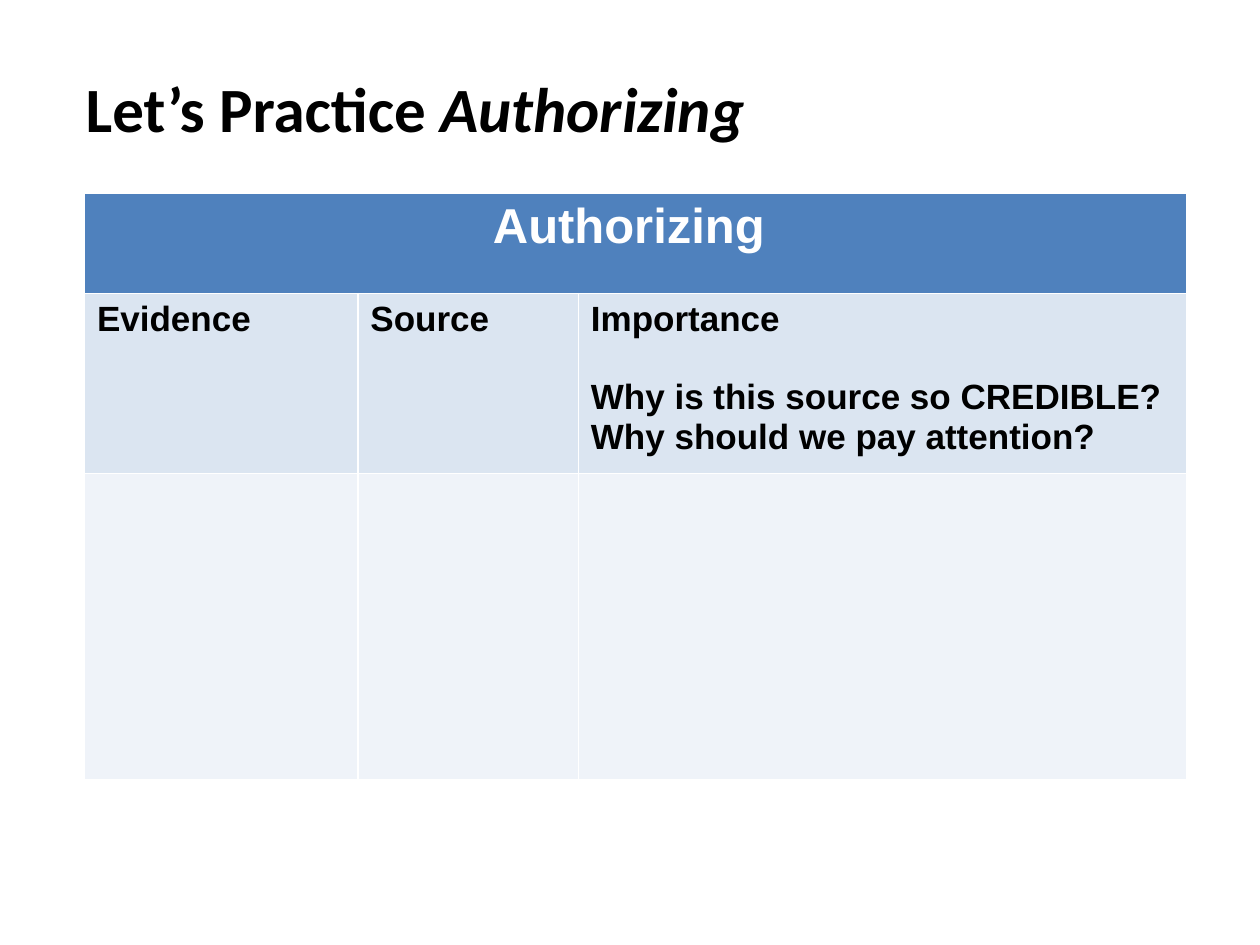
from pptx import Presentation
from pptx.dml.color import RGBColor
from pptx.enum.text import MSO_ANCHOR as Anchor, MSO_AUTO_SIZE as AutoSize, PP_ALIGN as Align
from pptx.util import Inches, Pt

HEADER, LABELS, BLANK = "4F81BD", "DBE5F1", "EFF3F9"
COLUMNS = (2.17, 1.75, 4.83)
ROWS = (0.8, 1.43, 2.43)
PROMPT = "Why is this source so CREDIBLE? Why should we pay attention?"
HEADINGS = (["Evidence"], ["Source"], ["Importance", PROMPT])


def color(code):
    return RGBColor.from_string(code)


def style_font(para, name, size, code):
    para.font.name = name
    para.font.size = Pt(size)
    para.font.bold = True
    para.font.color.rgb = color(code)


def place_title(title, left, top, width, height):
    title.left, title.top, title.width, title.height = map(
        Inches, (left, top, width, height))
    frame = title.text_frame
    frame.word_wrap = False
    frame.auto_size = AutoSize.NONE
    frame.vertical_anchor = Anchor.MIDDLE
    para = frame.paragraphs[0]
    para.alignment = Align.LEFT
    style_font(para, "Calibri", 36, "000000")
    para.add_run().text = "Let’s Practice "
    span = para.add_run()
    span.text = "Authorizing"
    span.font.italic = True


def fill_cell(cell, lines, size, code):
    """Write one paragraph per line, with a line's gap between them."""
    frame = cell.text_frame
    for index, line in enumerate(lines):
        para = frame.add_paragraph() if index else frame.paragraphs[0]
        para.text = line
        if index:
            para.space_before = Pt(22.5)
        style_font(para, "Arial", size, code)


def place_table(page, left, top):
    frame = page.shapes.add_table(
        len(ROWS), len(COLUMNS), Inches(left), Inches(top),
        Inches(sum(COLUMNS)), Inches(sum(ROWS)))
    table = frame.table
    for column, width in zip(table.columns, COLUMNS):
        column.width = Inches(width)
    for row, height, fill in zip(table.rows, ROWS, (HEADER, LABELS, BLANK)):
        row.height = Inches(height)
        for cell in row.cells:
            cell.fill.solid()
            cell.fill.fore_color.rgb = color(fill)

    # Header across all columns
    header = table.cell(0, 0)
    header.merge(table.cell(0, len(COLUMNS) - 1))
    fill_cell(header, ["Authorizing "], 28, "FFFFFF")
    header.text_frame.paragraphs[0].alignment = Align.CENTER

    # Column headings
    for index, lines in enumerate(HEADINGS):
        fill_cell(table.cell(1, index), lines, 20, "000000")


def main():
    deck = Presentation()
    deck.slide_width, deck.slide_height = Inches(10), Inches(7.5)
    page = deck.slides.add_slide(deck.slide_layouts[5])
    place_table(page, 0.67, 1.53)
    place_title(page.shapes.title, 0.58, 0.5, 5.51, 0.71)
    deck.save("out.pptx")


if __name__ == "__main__":
    main()
